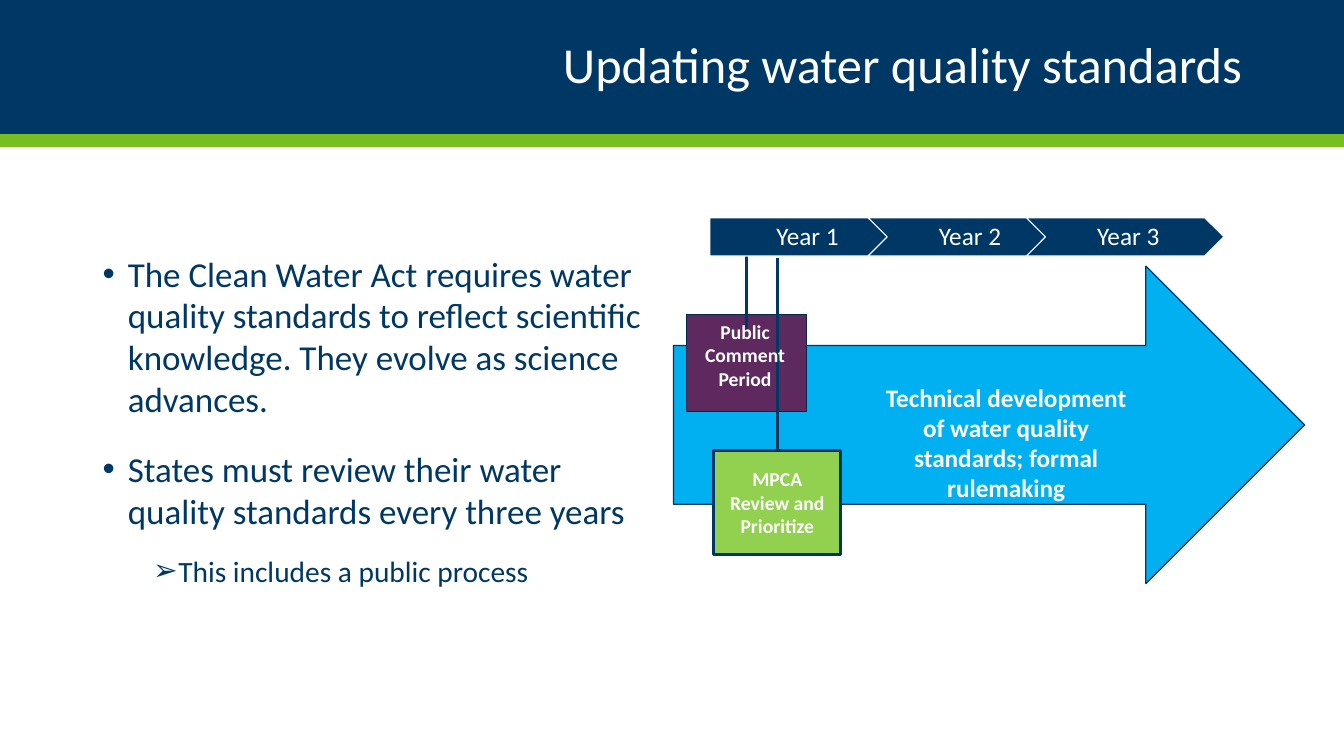
import pptx
import pptx.util
import pptx.dml.color
import pptx.enum.shapes
import pptx.enum.text
import pptx.oxml
import pptx.oxml.ns

Inches = pptx.util.Inches
Pt = pptx.util.Pt
RGBColor = pptx.dml.color.RGBColor
SHAPE = pptx.enum.shapes.MSO_SHAPE
ANCHOR = pptx.enum.text.MSO_ANCHOR
ALIGN = pptx.enum.text.PP_ALIGN
qn = pptx.oxml.ns.qn

FONT = "Calibri"
NAVY = RGBColor(0x00, 0x38, 0x65)
DARK_NAVY = RGBColor(0x00, 0x29, 0x4B)
GREEN = RGBColor(0x78, 0xBE, 0x21)
LIGHT_GREEN = RGBColor(0x92, 0xD0, 0x50)
BLUE = RGBColor(0x00, 0xB0, 0xF0)
PURPLE = RGBColor(0x5D, 0x29, 0x5F)
WHITE = RGBColor(0xFF, 0xFF, 0xFF)

BULLETS = [
    # text, level, size, left indent, space before
    ("The Clean Water Act requires water quality standards to reflect "
     "scientific knowledge. They evolve as science advances.", 0, 25, 0.25, 0),
    ("States must review their water quality standards every three years",
     0, 25, 0.25, 10),
    ("This includes a public process", 1, 21, 0.75, 5),
]
BULLET_SIGNS = ["•", "➢"]


def add_block(slide, kind, left, top, width, height, fill, line=None, line_width=0.85):
    shape = slide.shapes.add_shape(
        kind, Inches(left), Inches(top), Inches(width), Inches(height))
    shape.shadow.inherit = False
    shape.fill.solid()
    shape.fill.fore_color.rgb = fill
    if line is None:
        shape.line.fill.background()
    else:
        shape.line.color.rgb = line
        shape.line.width = Pt(line_width)
    return shape


def write_text(shape, text, size, bold=False, align=ALIGN.CENTER,
               anchor=ANCHOR.MIDDLE, spacing=None):
    frame = shape.text_frame
    frame.word_wrap = True
    frame.vertical_anchor = anchor
    frame.text = text
    for paragraph in frame.paragraphs:
        paragraph.alignment = align
        paragraph.line_spacing = spacing
        format_font(paragraph, size, WHITE, bold)


def format_font(paragraph, size, color, bold=False):
    for run in paragraph.runs:
        run.font.name = FONT
        run.font.size = Pt(size)
        run.font.bold = bold
        run.font.color.rgb = color


def add_label(slide, left, top, width, height, text, size, **options):
    box = slide.shapes.add_textbox(
        Inches(left), Inches(top), Inches(width), Inches(height))
    write_text(box, text, size, **options)
    return box


def add_line(slide, x, bottom, top):
    line = slide.shapes.add_connector(
        pptx.enum.shapes.MSO_CONNECTOR.STRAIGHT,
        Inches(x), Inches(bottom), Inches(x), Inches(top))
    line.line.color.rgb = NAVY
    line.line.width = Pt(2.25)
    pptx.oxml.ns.qn  # namespace helper used for the effect list
    line._element.spPr.append(pptx.oxml.parse_xml(
        '<a:effectLst xmlns:a="http://schemas.openxmlformats.org/drawingml/2006/main"/>'))


def set_bullet(paragraph, sign, left):
    properties = paragraph._p.get_or_add_pPr()
    properties.set("marL", str(Inches(left)))
    properties.set("indent", str(Inches(-0.25)))
    color = properties.makeelement(qn("a:buClr"), {})
    color.append(color.makeelement(qn("a:srgbClr"), {"val": str(NAVY)}))
    properties.append(color)
    properties.append(properties.makeelement(qn("a:buFont"), {"typeface": "Arial"}))
    properties.append(properties.makeelement(qn("a:buChar"), {"char": sign}))


def add_bullets(slide):
    body = add_block(slide, SHAPE.RECTANGLE, 0.92, 1.74, 5.67, 5.01, WHITE)
    frame = body.text_frame
    frame.word_wrap = True
    frame.vertical_anchor = ANCHOR.TOP
    frame.margin_top = Inches(0.76)
    frame.text = "\n".join(bullet[0] for bullet in BULLETS)
    for paragraph, (_, level, size, left, before) in zip(frame.paragraphs, BULLETS):
        paragraph.level = level
        paragraph.alignment = ALIGN.LEFT
        paragraph.space_before = Pt(before)
        paragraph.space_after = Pt(10)
        set_bullet(paragraph, BULLET_SIGNS[level], left)
        format_font(paragraph, size, NAVY)


def add_years(slide):
    top, height, first_left, step = 2.16, 0.38, 7.04, 1.57
    for index in range(3):
        left = first_left + index * step
        kind = SHAPE.CHEVRON if index else SHAPE.PENTAGON
        add_block(slide, kind, left, top, 1.96, height, NAVY, WHITE)
        label_left, label_width = (left + 0.18, 1.61) if index else (left, 1.87)
        label = add_label(slide, label_left, top, label_width, height,
                          f"Year {index + 1}", 18, spacing=0.9)
        label.text_frame.margin_left = Inches(0.08 if index else 0.1)
        label.text_frame.margin_right = Inches(0.03)


def main():
    presentation = pptx.Presentation()
    presentation.slide_width = Inches(13.33)
    presentation.slide_height = Inches(7.5)
    slide = presentation.slides.add_slide(presentation.slide_layouts[6])

    # Header band and title
    add_block(slide, SHAPE.RECTANGLE, 0, 0, 13.33, 1.33, NAVY)
    add_block(slide, SHAPE.RECTANGLE, 0, 1.33, 13.33, 0.13, GREEN)
    add_label(slide, 0.92, 0.17, 11.5, 1, "Updating water quality standards", 36,
              align=ALIGN.RIGHT, spacing=0.9)

    # Bulleted text
    add_bullets(slide)

    # Process arrow, comment period and timeline
    add_block(slide, SHAPE.RIGHT_ARROW, 6.68, 2.64, 6.26, 3.15, BLUE, NAVY)
    add_block(slide, SHAPE.RECTANGLE, 6.81, 3.12, 1.19, 0.96, PURPLE, DARK_NAVY)
    add_line(slide, 7.4, 3.28, 2.4)
    add_line(slide, 7.71, 4.47, 2.56)
    add_years(slide)

    # Process labels
    review = add_block(slide, SHAPE.RECTANGLE, 7.08, 4.47, 1.26, 1.03,
                       LIGHT_GREEN, NAVY, 2.25)
    write_text(review, "MPCA Review and Prioritize", 14, bold=True)
    add_label(slide, 6.66, 3.12, 1.46, 0.81, "Public Comment Period", 14,
              bold=True, anchor=ANCHOR.TOP)
    add_label(slide, 8.6, 3.74, 2.76, 0.96,
              "Technical development\nof water quality standards; formal rulemaking",
              18, bold=True, anchor=ANCHOR.TOP)

    presentation.save("out.pptx")


if __name__ == "__main__":
    main()
